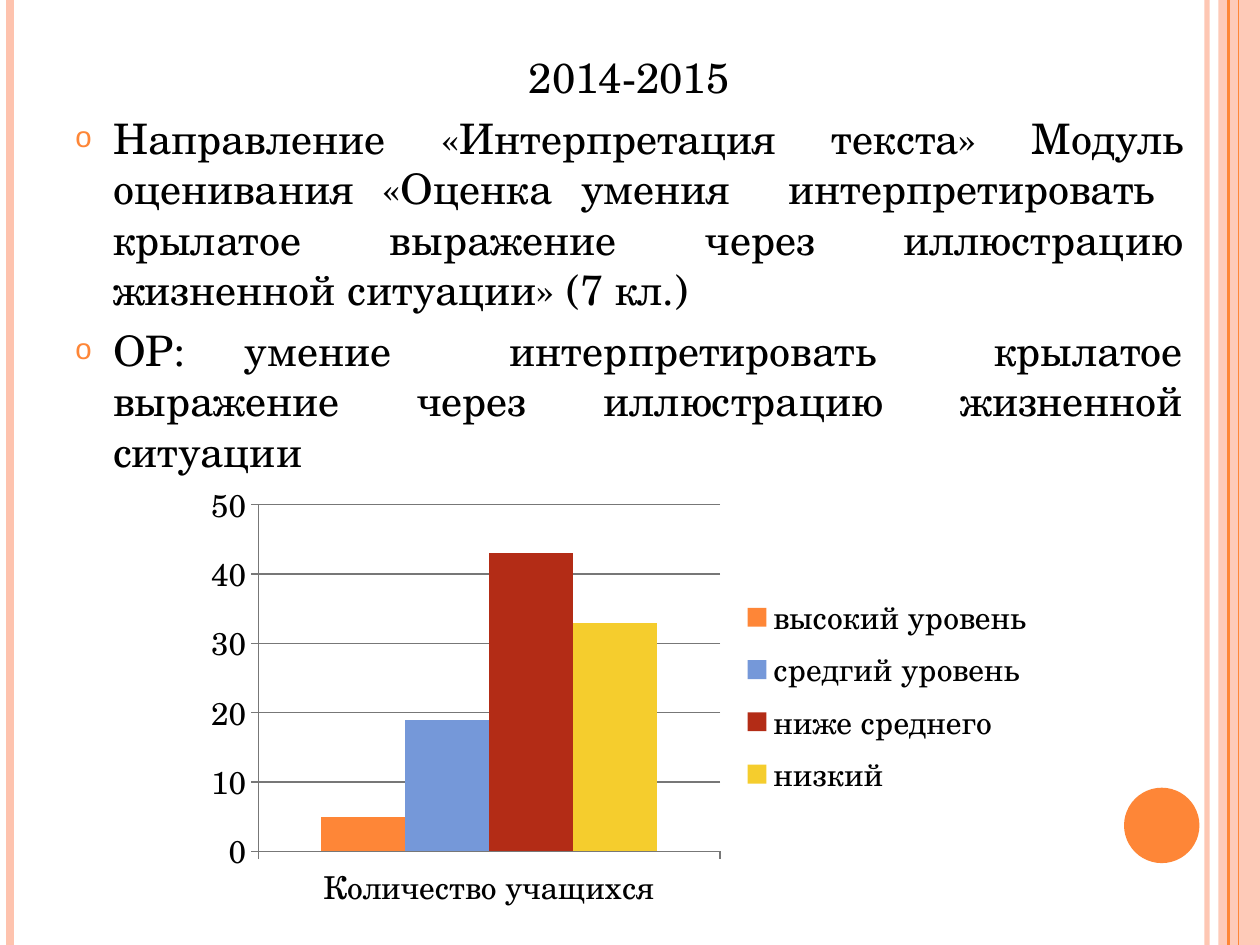
from dataclasses import dataclass

from lxml import etree
from pptx import Presentation
from pptx.chart.data import CategoryChartData
from pptx.dml.color import RGBColor
from pptx.enum.chart import XL_CHART_TYPE, XL_LEGEND_POSITION, XL_TICK_MARK
from pptx.enum.shapes import MSO_CONNECTOR, MSO_SHAPE
from pptx.enum.text import PP_ALIGN
from pptx.oxml.ns import qn
from pptx.util import Cm, Pt

COLUMNS = XL_CHART_TYPE.COLUMN_CLUSTERED
LEGEND_RIGHT = XL_LEGEND_POSITION.RIGHT
TICK_OUTSIDE = XL_TICK_MARK.OUTSIDE
STRAIGHT = MSO_CONNECTOR.STRAIGHT
CENTER, JUSTIFY = PP_ALIGN.CENTER, PP_ALIGN.JUSTIFY


@dataclass(frozen=True)
class Theme:
    font: str = "TeX Gyre Schola"
    bullet_font: str = "Arial"
    body_size: int = 24
    chart_size: int = 18
    text: str = "000000"
    accent: str = "FE8637"
    pale: str = "FEC3AE"
    blue: str = "7598D9"
    red: str = "B32C16"
    yellow: str = "F5CD2D"
    axis: str = "777777"


theme = Theme()


def set_fill(fill, color, opacity=100):
    """Solid fill; opacity is a percentage."""
    fill.solid()
    fill.fore_color.rgb = RGBColor.from_string(color)
    if opacity < 100:
        color_node = fill._xPr.find(qn("a:solidFill"))[0]
        etree.SubElement(color_node, qn("a:alpha"), val=str(opacity * 1000))


def add_bullet(paragraph):
    """Hanging round bullet in the accent colour."""
    properties = paragraph._p.get_or_add_pPr()
    properties.set("marL", str(Cm(0.76)))
    properties.set("indent", str(-Cm(0.76)))
    bullet_color = etree.SubElement(properties, qn("a:buClr"))
    etree.SubElement(bullet_color, qn("a:srgbClr"), val=theme.accent)
    etree.SubElement(properties, qn("a:buSzPct"), val="70000")
    etree.SubElement(properties, qn("a:buFont"), typeface=theme.bullet_font)
    etree.SubElement(properties, qn("a:buChar"), char="o")


deck = Presentation()
deck.slide_width, deck.slide_height = Cm(25.4), Cm(19.05)
page = deck.slides.add_slide(deck.slide_layouts[6])

# Side stripes: x, colour, width, opacity; the band lies beneath the thin ones
band = page.shapes.add_shape(MSO_SHAPE.RECTANGLE, Cm(24.56), 0, Cm(0.84), deck.slide_height)
set_fill(band.fill, theme.pale, 87)
stripes = [
    (24.33, theme.pale, 3, 93),
    (0.2, theme.pale, 4.5, 100),
    (24.97, theme.accent, 0.75, 100),
    (24.77, theme.accent, 1.5, 100),
]
stripes[2:] = [(24.97, theme.accent, 0.75, 100), (24.77, theme.accent, 1.5, 100)]
stripes[2:] = [(24.77, theme.accent, 1.5, 100), (24.97, theme.accent, 0.75, 100)]
for x, color, width, opacity in stripes:
    stripe = page.shapes.add_connector(STRAIGHT, Cm(x), 0, Cm(x), deck.slide_height)
    stripe.line.width = Pt(width)
    set_fill(stripe.line.fill, color, opacity)
    etree.SubElement(stripe._element.spPr, qn("a:effectLst"))

disc = page.shapes.add_shape(MSO_SHAPE.OVAL, Cm(22.66), Cm(15.88), Cm(1.52), Cm(1.52))
set_fill(disc.fill, theme.accent)
for shape in (band, disc):
    shape.line.fill.background()
    shape.shadow.inherit = False

# Heading and bullets
box = page.shapes.add_textbox(Cm(1.27), Cm(0.91), Cm(22.83), Cm(17.07))
box.text_frame.word_wrap = True
box.text_frame.text = "\n".join([
    "2014-2015",
    "Направление «Интерпретация текста» Модуль оценивания «Оценка умения  интерпретировать  "
    "крылатое выражение через иллюстрацию жизненной ситуации» (7 кл.)",
    "ОР: умение  интерпретировать  крылатое выражение через иллюстрацию жизненной ситуации",
])
for index, paragraph in enumerate(box.text_frame.paragraphs):
    paragraph.alignment = JUSTIFY if index else CENTER
    paragraph.space_before = Pt(6)
    if index:
        add_bullet(paragraph)
    for span in paragraph.runs:
        span.font.name = theme.font
        span.font.size = Pt(theme.body_size)
        span.font.color.rgb = RGBColor.from_string(theme.text)

# Chart of pupils by level
levels = [
    ("высокий уровень", 5, theme.accent),
    ("средгий уровень", 19, theme.blue),
    ("ниже среднего", 43, theme.red),
    ("низкий", 33, theme.yellow),
]
data = CategoryChartData()
data.categories = ["Количество учащихся"]
for name, value, _ in levels:
    data.add_series(name, [value])
chart = page.shapes.add_chart(COLUMNS, Cm(3.91), Cm(9.53), Cm(17.2), Cm(8.99), data).chart
chart.has_title = False
chart.font.name = theme.font
chart.font.size = Pt(theme.chart_size)
chart.font.color.rgb = RGBColor.from_string(theme.text)
chart.has_legend = True
chart.legend.position = LEGEND_RIGHT
chart.legend.include_in_layout = False

plot = chart.plots[0]
plot.gap_width = 150
plot.overlap = 0
plot.vary_by_categories = False
for series, (_, _, color) in zip(plot.series, levels):
    set_fill(series.format.fill, color)

value_axis = chart.value_axis
value_axis.minimum_scale, value_axis.maximum_scale, value_axis.major_unit = 0, 50, 10
value_axis.has_major_gridlines = True
for axis in (chart.category_axis, value_axis):
    axis.major_tick_mark = TICK_OUTSIDE
for part in (chart.category_axis, value_axis, value_axis.major_gridlines):
    set_fill(part.format.line.fill, theme.axis)

deck.save("out.pptx")
